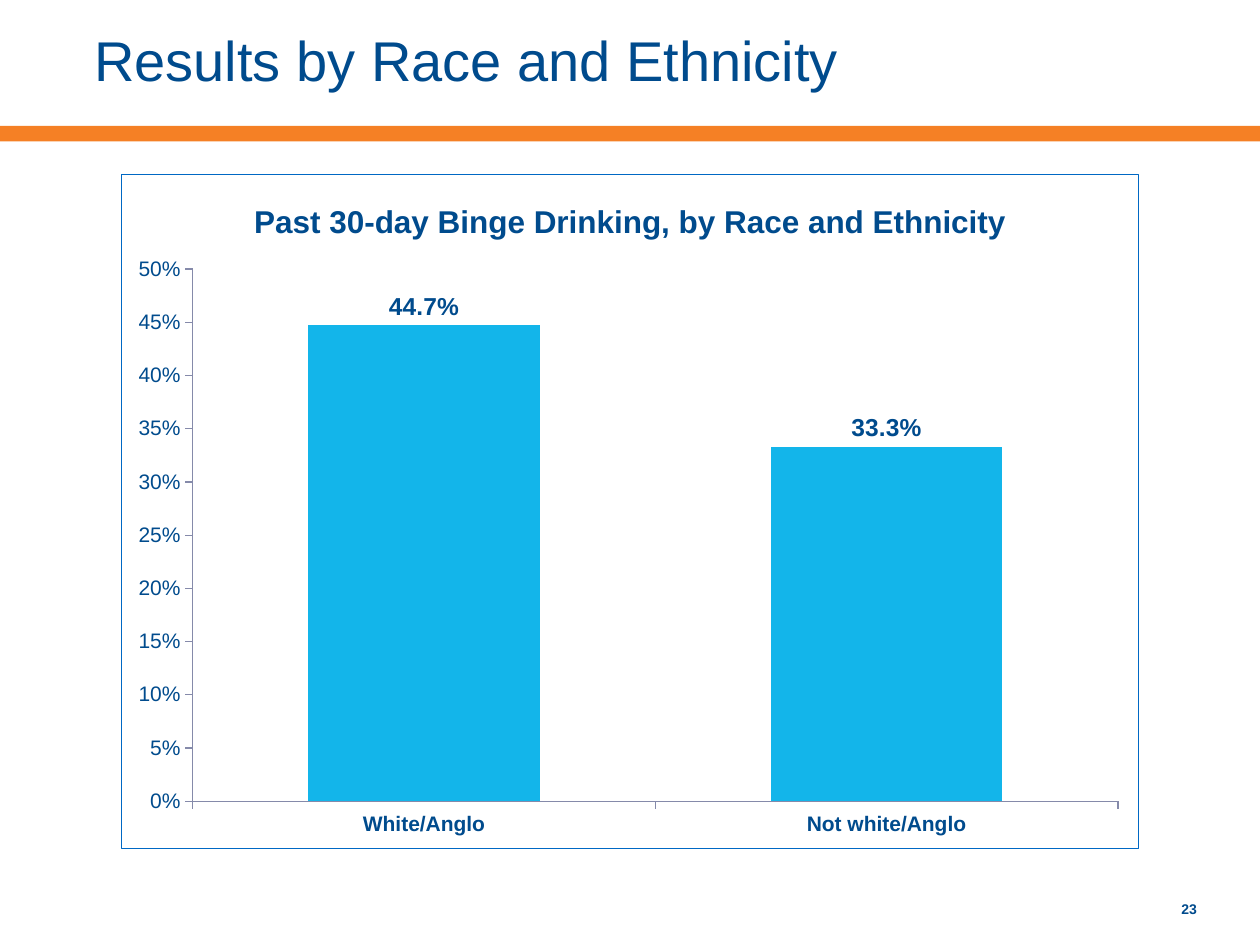
import pptx
import pptx.chart.data
import pptx.dml.color
import pptx.enum.chart
import pptx.enum.shapes
import pptx.enum.text
import pptx.oxml
import pptx.oxml.ns
import pptx.util
from pptx.util import Cm, Pt

# Content
TITLE = "Results by Race and Ethnicity"
PAGE_NUMBER = "23"
CHART_TITLE = "Past 30-day Binge Drinking, by Race and Ethnicity"
RATES = {"White/Anglo": 0.447, "Not white/Anglo": 0.333}

# Style
FONT = "Arial"
NAVY = pptx.dml.color.RGBColor(0x00, 0x4B, 0x8D)
ORANGE = pptx.dml.color.RGBColor(0xF5, 0x80, 0x25)
SKY = pptx.dml.color.RGBColor(0x13, 0xB5, 0xEA)
BORDER = pptx.dml.color.RGBColor(0x00, 0x68, 0xC4)
AXIS = pptx.dml.color.RGBColor(0x85, 0x8A, 0xAA)
PLOT_AREA = {"x": 0.07, "y": 0.14, "w": 0.91, "h": 0.79}


def style_font(font, size, bold=False):
    font.name = FONT
    font.size = Pt(size)
    font.bold = bold
    font.color.rgb = NAVY


def fill_text(shape, text, size, margins, bold=False):
    frame = shape.text_frame
    frame.word_wrap = True
    frame.margin_left, frame.margin_right = margins
    frame.margin_top = frame.margin_bottom = Cm(0.13)
    frame.text = text
    style_font(frame.paragraphs[0].font, size, bold)
    return frame


presentation = pptx.Presentation()
presentation.slide_width = Cm(25.4)
presentation.slide_height = Cm(19.05)
slide = presentation.slides.add_slide(presentation.slide_layouts[5])

# Orange band
band = slide.shapes.add_shape(
    pptx.enum.shapes.MSO_SHAPE.RECTANGLE, 0, Cm(2.54), presentation.slide_width, Cm(0.31))
band.shadow.inherit = False
band.fill.solid()
band.fill.fore_color.rgb = ORANGE
band.line.fill.background()

# Title
title = slide.shapes.title
title.left, title.top, title.width, title.height = Cm(1.9), Cm(0), Cm(22.23), Cm(2.54)
frame = fill_text(title, TITLE, 32, (0, Cm(0.25)))
frame.vertical_anchor = pptx.enum.text.MSO_ANCHOR.MIDDLE
frame.paragraphs[0].alignment = pptx.enum.text.PP_ALIGN.LEFT
frame.paragraphs[0].line_spacing = 0.9

# Page number
number = slide.shapes.add_textbox(Cm(18.21), Cm(18.03), Cm(5.92), Cm(1.02))
frame = fill_text(number, PAGE_NUMBER, 8, (Cm(0.25), 0), bold=True)
frame.paragraphs[0].alignment = pptx.enum.text.PP_ALIGN.RIGHT

# Column chart
data = pptx.chart.data.CategoryChartData(number_format="0.0%")
data.categories = list(RATES)
data.add_series("Series 1", list(RATES.values()))
chart = slide.shapes.add_chart(
    pptx.enum.chart.XL_CHART_TYPE.COLUMN_CLUSTERED,
    Cm(2.44), Cm(3.51), Cm(20.52), Cm(13.61), data).chart
style_font(chart.font, 10)
chart.has_legend = False
chart.has_title = True
chart.chart_title.text_frame.text = CHART_TITLE
style_font(chart.chart_title.text_frame.paragraphs[0].font, 18, bold=True)
chart.chart_title.include_in_layout = False

plot = chart.plots[0]
plot.gap_width = 100
plot.vary_by_categories = False
series = plot.series[0]
series.format.fill.solid()
series.format.fill.fore_color.rgb = SKY
labels = series.data_labels
labels.show_value = True
labels.number_format = "####.0%"
labels.number_format_is_linked = False
labels.position = pptx.enum.chart.XL_LABEL_POSITION.OUTSIDE_END
style_font(labels.font, 14, bold=True)

# Axes
for axis, bold in ((chart.category_axis, True), (chart.value_axis, False)):
    axis.has_major_gridlines = False
    axis.major_tick_mark = pptx.enum.chart.XL_TICK_MARK.OUTSIDE
    axis.minor_tick_mark = pptx.enum.chart.XL_TICK_MARK.NONE
    axis.format.line.color.rgb = AXIS
    axis.format.line.width = Pt(0.75)
    style_font(axis.tick_labels.font, 12, bold)
value_axis = chart.value_axis
value_axis.minimum_scale, value_axis.maximum_scale = 0, 0.5
value_axis.major_unit = 0.05
value_axis.tick_labels.number_format = "0%"
value_axis.tick_labels.number_format_is_linked = False

# Chart border and inner plot position
namespaces = pptx.oxml.ns.nsdecls("c", "a")
chart_element = chart.element.find(pptx.oxml.ns.qn("c:chart"))
chart_element.addnext(pptx.oxml.parse_xml(
    f'<c:spPr {namespaces}><a:noFill/><a:ln w="{Pt(0.75)}"><a:solidFill>'
    f'<a:srgbClr val="{BORDER}"/></a:solidFill></a:ln></c:spPr>'))
plot_area = chart_element.find(pptx.oxml.ns.qn("c:plotArea"))
for old_layout in plot_area.findall(pptx.oxml.ns.qn("c:layout")):
    plot_area.remove(old_layout)
position = "".join(f'<c:{key} val="{value}"/>' for key, value in PLOT_AREA.items())
plot_area.insert(0, pptx.oxml.parse_xml(
    f'<c:layout {namespaces}><c:manualLayout><c:layoutTarget val="inner"/>'
    f'<c:xMode val="edge"/><c:yMode val="edge"/>{position}</c:manualLayout></c:layout>'))

presentation.save("out.pptx")
